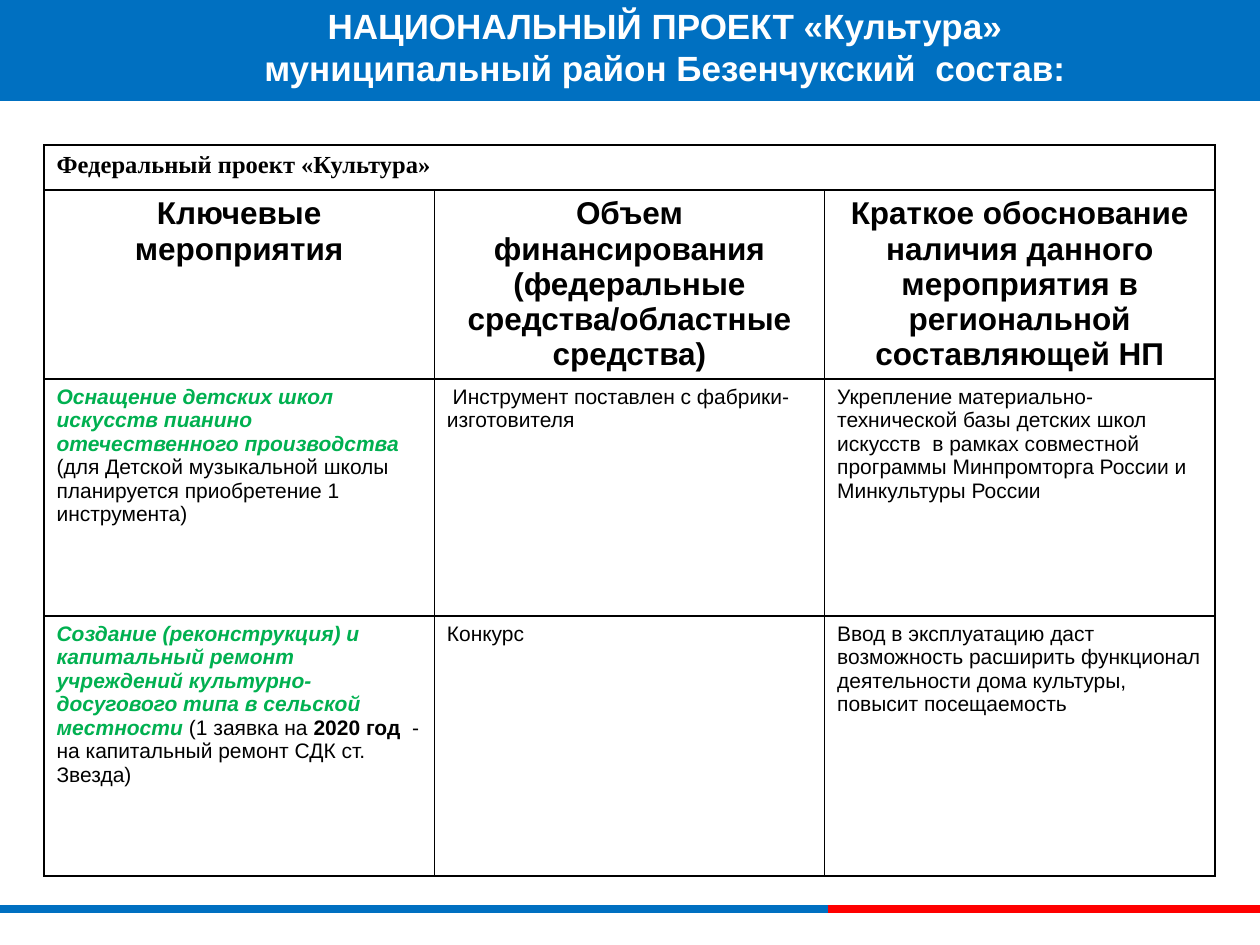
from lxml.etree import SubElement
from pptx import Presentation
from pptx.dml.color import RGBColor
from pptx.enum.shapes import MSO_CONNECTOR, MSO_SHAPE
from pptx.enum.text import MSO_ANCHOR, MSO_AUTO_SIZE, PP_ALIGN
from pptx.oxml.ns import qn
from pptx.util import Pt

SCALE = 914400 / 126  # EMU in one px
BLUE, RED, GREEN = "0070C1", "FF0000", "00B050"
BLACK, WHITE = "000000", "FFFFFF"

TITLE = "НАЦИОНАЛЬНЫЙ ПРОЕКТ «Культура»\vмуниципальный район Безенчукский  состав:"
HEADS = [
    "Ключевые мероприятия",
    "Объем финансирования (федеральные средства/областные средства)",
    "Краткое обоснование наличия данного мероприятия в региональной составляющей НП",
]
# Each cell is a list of (text, style) runs
BODY = [
    [
        [("Оснащение детских школ искусств пианино отечественного производства ", "key"),
         ("(для Детской музыкальной школы  планируется приобретение 1 инструмента)", "")],
        [(" Инструмент поставлен с фабрики-изготовителя", "")],
        [("Укрепление материально-технической базы детских школ искусств  в рамках "
          "совместной программы Минпромторга России и Минкультуры России", "")],
    ],
    [
        [("Создание (реконструкция) и капитальный ремонт учреждений "
          "культурно-досугового типа в сельской местности ", "key"),
         ("(1 заявка на ", ""), ("2020 год ", "bold"),
         (" - на капитальный ремонт СДК ст. Звезда)", "")],
        [("Конкурс", "")],
        [("Ввод в эксплуатацию даст возможность расширить функционал деятельности "
          "дома культуры, повысит посещаемость", "")],
    ],
]


def px(num):
    return round(num * SCALE)


def tint(text):
    return RGBColor.from_string(text)


def style(para, size, color=BLACK, bold=False, face="Arial", align=PP_ALIGN.LEFT):
    para.alignment = align
    font = para.font
    font.name, font.size, font.bold = face, Pt(size), bold
    font.color.rgb = tint(color)


def add_band(slide, left, top, width, height):
    band = slide.shapes.add_shape(
        MSO_SHAPE.RECTANGLE, px(left), px(top), px(width), px(height))
    band.shadow.inherit = False
    band.fill.solid()
    band.fill.fore_color.rgb = tint(BLUE)
    band.line.fill.background()


def add_rule(slide, start, end, y, color):
    rule = slide.shapes.add_connector(
        MSO_CONNECTOR.STRAIGHT, px(start), px(y), px(end), px(y))
    rule.line.color.rgb = tint(color)
    rule.line.width = Pt(5)
    SubElement(rule._element.spPr, qn("a:effectLst"))


def set_title(slide):
    title = slide.shapes.title
    slide.shapes._spTree.append(title._element)  # in front of the band
    title.left, title.top, title.width, title.height = map(px, (164, -4, 1002, 102))
    frame = title.text_frame
    frame.text = TITLE
    frame.word_wrap = True
    frame.auto_size = MSO_AUTO_SIZE.NONE
    frame.vertical_anchor = MSO_ANCHOR.MIDDLE
    frame.margin_left = frame.margin_right = px(6)
    frame.margin_top = frame.margin_bottom = px(6)
    style(frame.paragraphs[0], 20, WHITE, True, align=PP_ALIGN.CENTER)


def frame_cell(cell):
    props = cell._tc.get_or_add_tcPr()
    for side in ("lnL", "lnR", "lnT", "lnB"):
        edge = SubElement(props, qn(f"a:{side}"), w=str(Pt(1)))
        fill = SubElement(edge, qn("a:solidFill"))
        SubElement(fill, qn("a:srgbClr"), val=BLACK)
    cell.fill.background()


def fill_cell(cell, runs):
    para = cell.text_frame.paragraphs[0]
    style(para, 12)
    for text, kind in runs:
        run = para.add_run()
        run.text = text
        if kind:
            run.font.bold = True
        if kind == "key":
            run.font.italic = True
            run.font.color.rgb = tint(GREEN)


def add_grid(slide):
    rows = (45, 189, 237, 260)
    grid = slide.shapes.add_table(
        len(rows), len(HEADS), px(44), px(145), px(1171), px(sum(rows))).table
    grid.first_row = grid.horz_banding = False
    for row, high in zip(grid.rows, rows):
        row.height = px(high)
    for cell in grid.iter_cells():
        frame_cell(cell)

    # Project name across all columns
    top = grid.cell(0, 0)
    top.merge(grid.cell(0, len(HEADS) - 1))
    top.text = "Федеральный проект «Культура»"
    style(top.text_frame.paragraphs[0], 14, bold=True, face="Times New Roman")

    # Column heads, then the measures
    for col, text in enumerate(HEADS):
        cell = grid.cell(1, col)
        cell.text = text
        style(cell.text_frame.paragraphs[0], 18, bold=True, align=PP_ALIGN.CENTER)
    for row, cells in enumerate(BODY, 2):
        for col, runs in enumerate(cells):
            fill_cell(grid.cell(row, col), runs)


def main():
    deck = Presentation()
    deck.slide_width, deck.slide_height = px(1260), px(945)
    slide = deck.slides.add_slide(deck.slide_layouts[5])
    # Footer rules and header band
    add_rule(slide, 0, 828, 909, BLUE)
    add_rule(slide, 828, 1260, 909, RED)
    add_band(slide, 0, -4, 1260, 105)
    # Content
    set_title(slide)
    add_grid(slide)
    deck.save("out.pptx")


if __name__ == "__main__":
    main()
